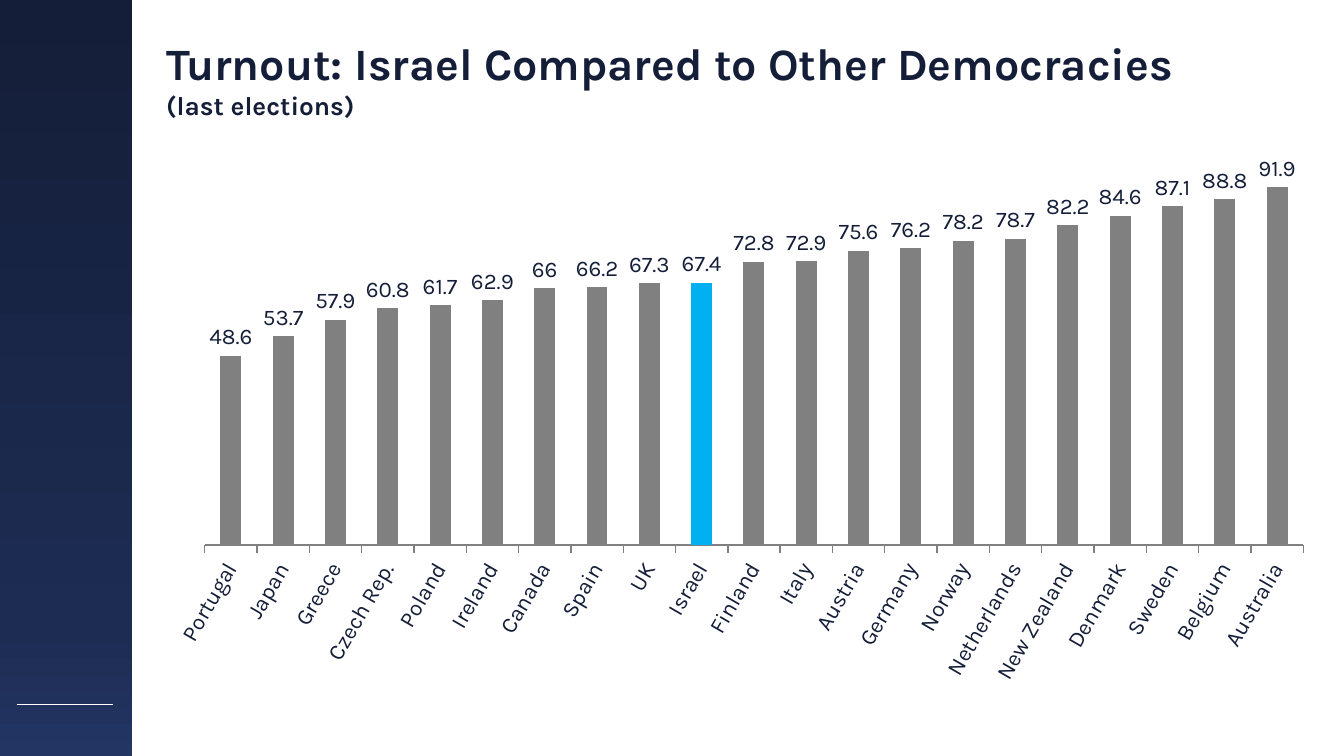
from typing import NamedTuple

from lxml import etree
from pptx import Presentation
from pptx import util as u
from pptx.chart.data import CategoryChartData
from pptx.dml.color import RGBColor
from pptx.enum import chart as ch, shapes, text
from pptx.oxml import parse_xml
from pptx.oxml.ns import nsdecls, qn

EMU_PER_PX = 914400 / 134.4
FONT = "Karla"
NAVY = RGBColor(0x14, 0x1E, 0x38)
MID_NAVY = RGBColor(0x1D, 0x2C, 0x53)
BLUE = RGBColor(0x23, 0x35, 0x63)
WHITE = RGBColor(0xFF, 0xFF, 0xFF)
GRAY = RGBColor(0x80, 0x80, 0x80)
HIGHLIGHT = RGBColor(0x00, 0xB0, 0xF0)


class Box(NamedTuple):
    left: int
    top: int
    width: int
    height: int

    def emu(self) -> list[u.Emu]:
        return [px(length) for length in self]


class Turnout(NamedTuple):
    country: str
    percent: float


SIDEBAR = Box(0, 0, 132, 756)
TITLE = Box(153, 31, 1175, 94)
CHART = Box(153, 145, 1175, 551)
PLOT = Box(205, 156, 1099, 389)

TURNOUTS = [
    Turnout("Portugal", 48.6), Turnout("Japan", 53.7), Turnout("Greece", 57.9),
    Turnout("Czech Rep.", 60.8), Turnout("Poland", 61.7), Turnout("Ireland", 62.9),
    Turnout("Canada", 66), Turnout("Spain", 66.2), Turnout("UK", 67.3),
    Turnout("Israel", 67.4), Turnout("Finland", 72.8), Turnout("Italy", 72.9),
    Turnout("Austria", 75.6), Turnout("Germany", 76.2), Turnout("Norway", 78.2),
    Turnout("Netherlands", 78.7), Turnout("New Zealand", 82.2), Turnout("Denmark", 84.6),
    Turnout("Sweden", 87.1), Turnout("Belgium", 88.8), Turnout("Australia", 91.9),
]


def px(length: int) -> u.Emu:
    return u.Emu(round(length * EMU_PER_PX))


def style(font, size: int, bold: bool = False) -> None:
    font.name, font.size, font.bold = FONT, u.Pt(size), bold
    font.color.rgb = NAVY


def add_sidebar(slide) -> None:
    sidebar = slide.shapes.add_shape(shapes.MSO_SHAPE.RECTANGLE, *SIDEBAR.emu())
    sidebar.shadow.inherit = False
    sidebar.line.fill.background()
    stops = "".join(
        f'<a:gs pos="{percent * 1000}"><a:srgbClr val="{color}"/></a:gs>'
        for percent, color in ((0, NAVY), (83, MID_NAVY), (100, BLUE))
    )
    gradient = parse_xml(
        f'<a:gradFill {nsdecls("a")} rotWithShape="1"><a:gsLst>{stops}</a:gsLst>'
        '<a:lin ang="5400000" scaled="0"/></a:gradFill>'
    )
    sidebar._element.spPr.find(qn("a:prstGeom")).addnext(gradient)

    rule = slide.shapes.add_connector(
        shapes.MSO_CONNECTOR.STRAIGHT, px(113), px(704), px(17), px(704))
    rule.line.color.rgb = WHITE
    rule.line.width = u.Pt(0.25)
    etree.SubElement(rule._element.spPr, qn("a:effectLst"))


def add_title(slide) -> None:
    frame = slide.shapes.add_textbox(*TITLE.emu()).text_frame
    frame.word_wrap = True
    frame.vertical_anchor = text.MSO_ANCHOR.MIDDLE
    heading = frame.paragraphs[0]
    style(heading.font, 24, bold=True)
    heading.add_run().text = "Turnout: Israel Compared to Other Democracies"
    heading.add_line_break()
    subtitle = heading.add_run()
    subtitle.text = "(last elections)"
    subtitle.font.size = u.Pt(14)


def fix_plot_area(chart) -> None:
    """Place the inner plot area as fractions of the chart frame."""
    fractions = {
        "x": (PLOT.left - CHART.left) / CHART.width,
        "y": (PLOT.top - CHART.top) / CHART.height,
        "w": PLOT.width / CHART.width,
        "h": PLOT.height / CHART.height,
    }
    modes = '<c:xMode val="edge"/><c:yMode val="edge"/>'
    sizes = "".join(f'<c:{key} val="{value:.3f}"/>' for key, value in fractions.items())
    layout = parse_xml(
        f'<c:layout {nsdecls("c")}><c:manualLayout><c:layoutTarget val="inner"/>'
        f'{modes}{sizes}</c:manualLayout></c:layout>'
    )
    plot_area = chart._chartSpace.chart.plotArea
    for default in plot_area.findall(qn("c:layout")):
        plot_area.remove(default)
    plot_area.insert(0, layout)


def add_turnout_chart(slide) -> None:
    data = CategoryChartData()
    data.categories = [turnout.country for turnout in TURNOUTS]
    data.add_series("Series 1", [turnout.percent for turnout in TURNOUTS])
    chart = slide.shapes.add_chart(
        ch.XL_CHART_TYPE.COLUMN_CLUSTERED, *CHART.emu(), data).chart
    chart.has_legend = chart.has_title = False
    style(chart.font, 12)
    fix_plot_area(chart)

    # Axes
    percents = chart.value_axis
    percents.minimum_scale, percents.maximum_scale = 0, 100
    percents.has_major_gridlines = percents.visible = False
    countries = chart.category_axis
    countries.major_tick_mark = ch.XL_TICK_MARK.OUTSIDE
    countries.format.line.color.rgb = GRAY
    style(countries.tick_labels.font, 12)
    countries._element.txPr.find(qn("a:bodyPr")).set("rot", "-3600000")

    # Columns and their labels
    columns = chart.plots[0]
    columns.gap_width = 150
    columns.vary_by_categories = False
    series = columns.series[0]
    series.format.fill.solid()
    series.format.fill.fore_color.rgb = GRAY
    israel = series.points[[turnout.country for turnout in TURNOUTS].index("Israel")]
    israel.format.fill.solid()
    israel.format.fill.fore_color.rgb = HIGHLIGHT
    labels = series.data_labels
    labels.show_value = True
    labels.position = ch.XL_LABEL_POSITION.OUTSIDE_END
    style(labels.font, 12)


def main() -> None:
    deck = Presentation()
    deck.slide_width, deck.slide_height = px(1344), px(756)
    slide = deck.slides.add_slide(deck.slide_layouts[6])
    add_sidebar(slide)
    add_title(slide)
    add_turnout_chart(slide)
    deck.save("out.pptx")


if __name__ == "__main__":
    main()
